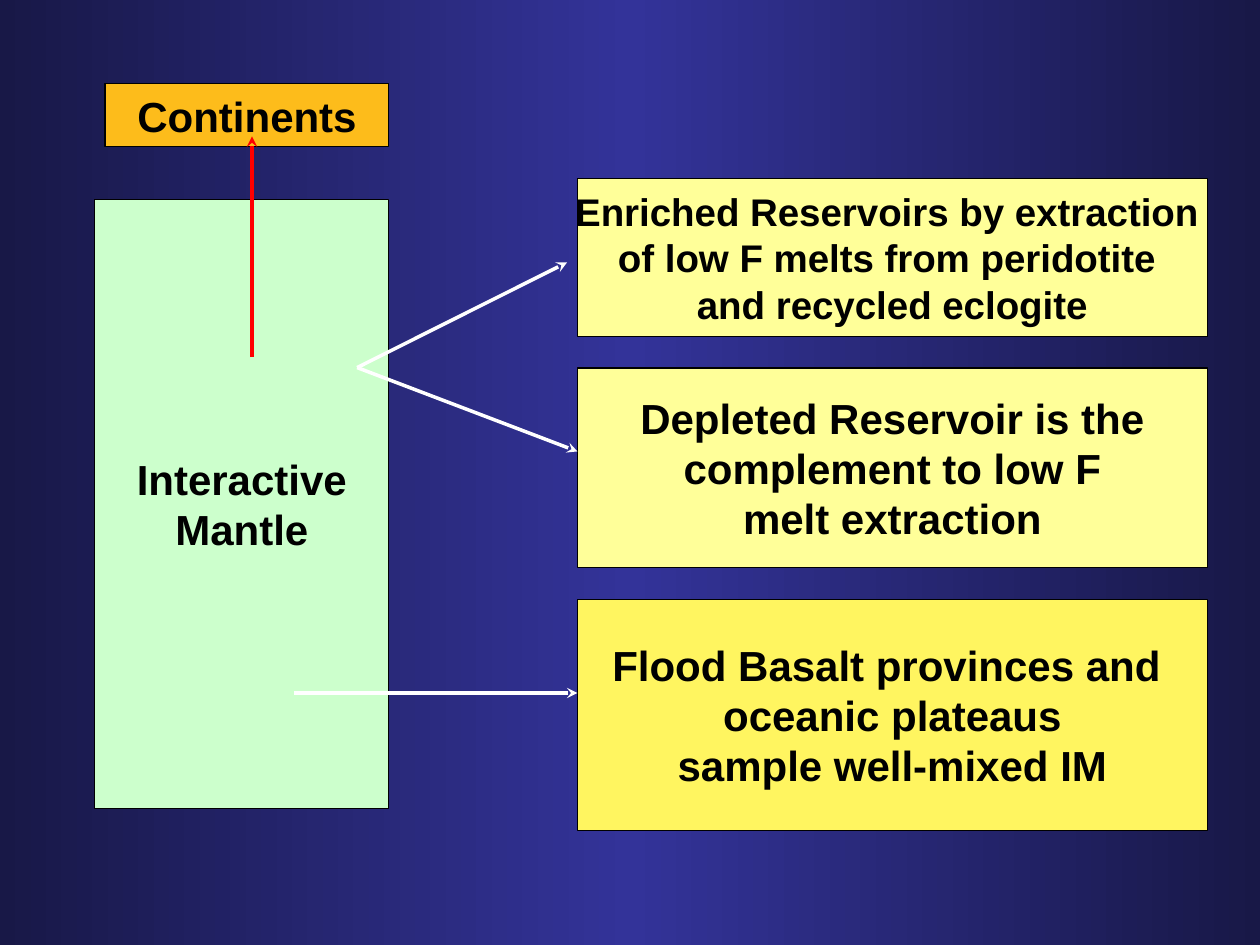
from copy import deepcopy

from lxml import etree
from pptx import Presentation
from pptx import util as u
from pptx.dml.color import RGBColor
from pptx.enum import shapes, text
from pptx.oxml.ns import qn

# Content: lengths in cm
SOURCES = [
    # left, top, width, height, fill, lines
    (2.12, 1.69, 5.72, 1.27, "orange", ["Continents"]),
    (1.91, 4.02, 5.93, 12.28, "green", ["Interactive", "Mantle"]),
]
RESULTS = [
    # height, fill, type size, lines
    (3.18, "pale", "small", ["Enriched Reservoirs by extraction ",
                             "of low F melts from peridotite ",
                             "and recycled eclogite"]),
    (4.02, "pale", "large", ["Depleted Reservoir is the",
                             "complement to low F",
                             "melt extraction"]),
    (4.66, "yellow", "large", ["Flood Basalt provinces and ",
                               "oceanic plateaus",
                               "sample well-mixed IM"]),
]
LEFT, TOP, WIDTH, GAP = 11.64, 3.6, 12.7, 0.64

MELT = (7.2, 7.41)
ARROWS = [
    # from, to, colour
    (MELT, (11.43, 5.29), "white"),
    (MELT, (LEFT, 9.1), "white"),
    ((5.93, 13.97), (LEFT, 13.97), "white"),
    ((5.08, 7.2), (5.08, 2.75), "red"),
]

THEME = {
    "font": "Arial", "small": 22, "large": 24, "edge": 0.75, "arrow": 2,
    "orange": "FDBC1B", "green": "CCFFCC", "pale": "FFFF99",
    "yellow": "FFF560", "white": "FFFFFF", "red": "FF0000",
    "black": "000000", "dark": "181847", "blue": "333399",
}


def tint(name):
    return RGBColor.from_string(THEME[name])


def paint_back(slide):
    """Fill the background dark to blue to dark, left to right."""
    fill = slide.background.fill
    fill.gradient()
    fill.gradient_angle = 0
    stops = slide.element.find(".//" + qn("a:gsLst"))
    stops.append(deepcopy(stops[-1]))
    for stop, name, pos in zip(fill.gradient_stops,
                               ("dark", "blue", "dark"), (0, 0.5, 1)):
        stop.color.rgb = tint(name)
        stop.position = pos


def add_box(slide, left, top, width, height, fill, lines, size="large"):
    box = slide.shapes.add_shape(
        shapes.MSO_SHAPE.RECTANGLE,
        *map(u.Cm, (left, top, width, height)))
    box.shadow.inherit = False
    box.fill.solid()
    box.fill.fore_color.rgb = tint(fill)
    box.line.color.rgb = tint("black")
    box.line.width = u.Pt(THEME["edge"])
    frame = box.text_frame
    frame.word_wrap = False
    frame.vertical_anchor = text.MSO_ANCHOR.MIDDLE
    for i, line in enumerate(lines):
        para = frame.add_paragraph() if i else frame.paragraphs[0]
        para.alignment = text.PP_ALIGN.CENTER
        run = para.add_run()
        run.text = line
        run.font.name = THEME["font"]
        run.font.size = u.Pt(THEME[size])
        run.font.bold = True
        run.font.color.rgb = tint("black")


def add_arrow(slide, start, end, color):
    arrow = slide.shapes.add_connector(
        shapes.MSO_CONNECTOR.STRAIGHT, *map(u.Cm, start + end))
    arrow.line.color.rgb = tint(color)
    arrow.line.width = u.Pt(THEME["arrow"])
    props = arrow.element.spPr
    etree.SubElement(props.find(qn("a:ln")), qn("a:tailEnd"), type="stealth")
    etree.SubElement(props, qn("a:effectLst"))


def main():
    deck = Presentation()
    deck.slide_width, deck.slide_height = u.Cm(25.4), u.Cm(19.05)
    slide = deck.slides.add_slide(deck.slide_layouts[6])
    paint_back(slide)
    for source in SOURCES:
        add_box(slide, *source)
    top = TOP
    for height, fill, size, lines in RESULTS:
        add_box(slide, LEFT, top, WIDTH, height, fill, lines, size)
        top += height + GAP
    for arrow in ARROWS:
        add_arrow(slide, *arrow)
    deck.save("out.pptx")


if __name__ == "__main__":
    main()
